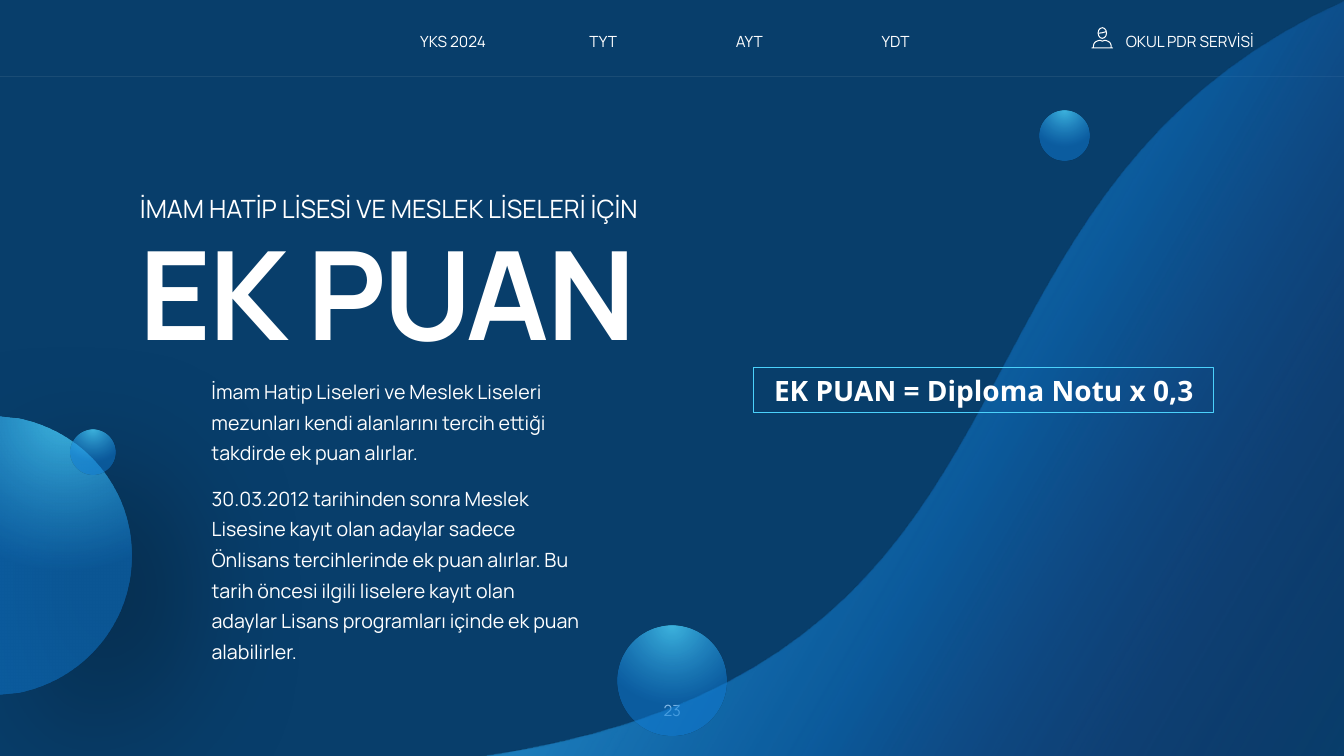
from dataclasses import dataclass

import pptx
import pptx.dml.color
import pptx.enum.shapes
import pptx.enum.text
import pptx.oxml
import pptx.oxml.ns
import pptx.util
from pptx.util import Pt

RGBColor = pptx.dml.color.RGBColor
Align = pptx.enum.text.PP_ALIGN
Preset = pptx.enum.shapes.MSO_SHAPE
qn = pptx.oxml.ns.qn
NSDECL = pptx.oxml.ns.nsdecls("a")

NAVY = RGBColor(0x08, 0x3E, 0x6B)
WHITE = RGBColor(0xFF, 0xFF, 0xFF)
HEADER_RULE = RGBColor(0xF2, 0xF2, 0xF2)
CYAN = RGBColor(0x4B, 0xD1, 0xFB)
AZURE = RGBColor(0x10, 0x7C, 0xD6)
VIOLET = RGBColor(0x3D, 0x1E, 0x66)
BLACK = RGBColor(0, 0, 0)

Point = tuple[float, float]


@dataclass(frozen=True)
class Caption:
    left: float
    top: float
    width: float
    height: float
    paragraphs: tuple[str, ...]
    size: float = 11
    align: Align = Align.LEFT
    bold: bool = False
    spacing: float = 1.0
    tracking: int = 0
    font: str = "Manrope"


@dataclass(frozen=True)
class Orb:
    left: float
    top: float
    diameter: float


@dataclass(frozen=True)
class Stop:
    position: int
    color: RGBColor
    alpha: int


NAV_STEP = 104.4
NAVIGATION = [
    Caption(386.64 + NAV_STEP * index, 19.44, 88.56, 20.88, (label,), align=Align.CENTER)
    for index, label in enumerate(("TYT", "AYT", "YDT"))
]
HEADER = [
    Caption(421.92, 497.5, 116.64, 20.88, ("23",), align=Align.CENTER),
    Caption(276.48, 19.44, 94.32, 20.88, ("YKS 2024",), align=Align.CENTER),
    *NAVIGATION,
    Caption(797.04, 19.44, 147.6, 20.88, ("OKUL PDR SERVİSİ",)),
]
HEADINGS = [
    Caption(92.88, 172.08, 517.68, 96.48, ("EK PUAN",), 88, bold=True, spacing=0.8, tracking=-150),
    Caption(92.88, 134.64, 385.2, 28.8, ("İMAM HATİP LİSESİ VE MESLEK LİSELERİ İÇİN",), 18),
]
RULES = [
    Caption(144, 262.8, 285.84, 72, (
        "İmam Hatip Liseleri ve Meslek Liseleri mezunları kendi alanlarını tercih ettiği "
        "takdirde ek puan alırlar.",
    ), 14, spacing=1.3),
    Caption(144, 339.12, 277.2, 138.24, (
        "30.03.2012 tarihinden sonra Meslek Lisesine kayıt olan adaylar sadece",
        "Önlisans tercihlerinde ek puan alırlar. Bu tarih öncesi ilgili liselere kayıt olan "
        "adaylar Lisans programları içinde ek puan alabilirler.",
    ), 14, spacing=1.3),
]
FORMULA = Caption(538.56, 262.8, 328.32, 31.68, ("EK PUAN = Diploma Notu x 0,3",), 20,
                  Align.CENTER, True, font="Open Sans")
UPPER_ORBS = [Orb(742.32, 79, 36), Orb(441.2, 447.2, 77.9)]
SMALL_LEFT_ORB = Orb(50.2, 307, 32)

WAVE_STOPS = [Stop(0, CYAN, 100), Stop(60, AZURE, 44), Stop(100, VIOLET, 0)]
WAVE_DIRECTION = '<a:lin ang="1800000" scaled="0"/>'
ORB_STOPS = [Stop(2, CYAN, 79), Stop(100, AZURE, 50)]
ORB_DIRECTION = (
    '<a:path path="circle"><a:fillToRect l="50000" t="-80000" r="50000" b="180000"/></a:path>'
)


def color_xml(color: RGBColor, alpha: int) -> str:
    return f'<a:srgbClr val="{color}"><a:alpha val="{alpha * 1000}"/></a:srgbClr>'


def fill_gradient(shape, stops: list[Stop], direction: str) -> None:
    shape.line.fill.background()
    shape.shadow.inherit = False
    shape.fill.background()
    stops_xml = "".join(
        f'<a:gs pos="{stop.position * 1000}">{color_xml(stop.color, stop.alpha)}</a:gs>'
        for stop in stops
    )
    gradient = pptx.oxml.parse_xml(
        f'<a:gradFill {NSDECL} rotWithShape="1"><a:gsLst>{stops_xml}</a:gsLst>{direction}</a:gradFill>'
    )
    properties = shape._element.spPr
    properties.replace(properties.find(qn("a:noFill")), gradient)


def write(shape, caption: Caption) -> None:
    frame = shape.text_frame
    frame.word_wrap = True
    frame.auto_size = pptx.enum.text.MSO_AUTO_SIZE.SHAPE_TO_FIT_TEXT
    for index, text in enumerate(caption.paragraphs):
        paragraph = frame.add_paragraph() if index else frame.paragraphs[0]
        run = paragraph.add_run()
        run.text = text
        if caption.tracking:
            run._r.get_or_add_rPr().set("spc", str(caption.tracking))
        paragraph.alignment = caption.align
        paragraph.line_spacing = caption.spacing
        paragraph.font.name = caption.font
        paragraph.font.size = Pt(caption.size)
        paragraph.font.bold = caption.bold
        paragraph.font.color.rgb = WHITE


def add_caption(slide, caption: Caption) -> None:
    box = slide.shapes.add_textbox(
        Pt(caption.left), Pt(caption.top), Pt(caption.width), Pt(caption.height))
    write(box, caption)


def add_orb(slide, orb: Orb) -> None:
    circle = slide.shapes.add_shape(
        Preset.OVAL, Pt(orb.left), Pt(orb.top), Pt(orb.diameter), Pt(orb.diameter))
    fill_gradient(circle, ORB_STOPS, ORB_DIRECTION)


def curve(start: Point, first: Point, second: Point, end: Point, steps: int = 40) -> list[Point]:
    points = []
    for step in range(steps + 1):
        t = step / steps
        weights = ((1 - t) ** 3, 3 * t * (1 - t) ** 2, 3 * t ** 2 * (1 - t), t ** 3)
        corners = (start, first, second, end)
        points.append((sum(w * c[0] for w, c in zip(weights, corners)),
                       sum(w * c[1] for w, c in zip(weights, corners))))
    return points


def add_outline(slide, points: list[Point], close: bool = True):
    start, *others = [(Pt(x), Pt(y)) for x, y in points]
    builder = slide.shapes.build_freeform(*start, scale=1.0)
    builder.add_line_segments(others, close=close)
    return builder.convert_to_shape()


def add_counselor_icon(slide) -> None:
    head = slide.shapes.add_shape(Preset.OVAL, Pt(784.4), Pt(19.8), Pt(6), Pt(7.6))
    fringe = add_outline(slide, [(784.6, 23.7), (787, 23.5), (790.2, 22.6)], close=False)
    shoulders = add_outline(slide, [
        *curve((781, 34.3), (781, 30.5), (782.2, 29.6), (785.6, 28.8), 8),
        (787.4, 29.4), (789.2, 28.8),
        *curve((789.2, 28.8), (792.6, 29.6), (793.8, 30.5), (793.8, 34.3), 8),
        (794.8, 34.3), (780, 34.3),
    ])
    for part in (head, fringe, shoulders):
        part.fill.background()
        part.line.color.rgb = WHITE
        part.line.width = Pt(0.75)
        part.shadow.inherit = False


def add_header_rule(slide) -> None:
    rule = slide.shapes.add_connector(
        pptx.enum.shapes.MSO_CONNECTOR.STRAIGHT, Pt(0), Pt(54.72), Pt(960), Pt(54.72))
    rule.line.color.rgb = HEADER_RULE
    rule.line.width = Pt(0.5)
    properties = rule._element.spPr
    color = properties.find(".//" + qn("a:srgbClr"))
    color.append(pptx.oxml.parse_xml(f'<a:alpha {NSDECL} val="8000"/>'))
    properties.append(pptx.oxml.parse_xml(f"<a:effectLst {NSDECL}/>"))


def add_half_orb(slide) -> None:
    half_orb = add_outline(slide, [
        (0, 297.36),
        *curve((13.68, 298.8), (59.76, 308.16), (93.6, 348.48), (93.6, 396.72)),
        *curve((93.6, 396.72), (93.6, 444.96), (59.76, 485.28), (13.68, 494.64)),
        (0, 496.08),
    ])
    fill_gradient(half_orb, ORB_STOPS, ORB_DIRECTION)
    half_orb._element.spPr.find(qn("a:effectLst")).append(pptx.oxml.parse_xml(
        f'<a:outerShdw {NSDECL} blurRad="{Pt(100)}" dist="{Pt(49)}" dir="2700000" '
        f'algn="tl" rotWithShape="0">{color_xml(BLACK, 60)}</a:outerShdw>'))


def add_formula(slide) -> None:
    formula = slide.shapes.add_shape(
        Preset.RECTANGLE, Pt(FORMULA.left), Pt(FORMULA.top), Pt(FORMULA.width), Pt(FORMULA.height))
    formula.fill.background()
    formula.line.color.rgb = CYAN
    formula.line.width = Pt(0.75)
    formula.shadow.inherit = False
    write(formula, FORMULA)


def main() -> None:
    deck = pptx.Presentation()
    deck.slide_width, deck.slide_height = Pt(960), Pt(540)
    slide = deck.slides.add_slide(deck.slide_layouts[6])
    slide.background.fill.solid()
    slide.background.fill.fore_color.rgb = NAVY

    for caption in HEADER:
        add_caption(slide, caption)
    add_header_rule(slide)
    add_counselor_icon(slide)
    wave = add_outline(slide, [
        *curve((960, 1.44), (641.52, 146.16), (779.04, 481.68), (332.64, 541.44)),
        (960, 541.44),
    ])
    fill_gradient(wave, WAVE_STOPS, WAVE_DIRECTION)
    for caption in HEADINGS:
        add_caption(slide, caption)
    for orb in UPPER_ORBS:
        add_orb(slide, orb)
    add_half_orb(slide)
    add_orb(slide, SMALL_LEFT_ORB)
    for caption in RULES:
        add_caption(slide, caption)
    add_formula(slide)
    deck.save("out.pptx")


if __name__ == "__main__":
    main()
